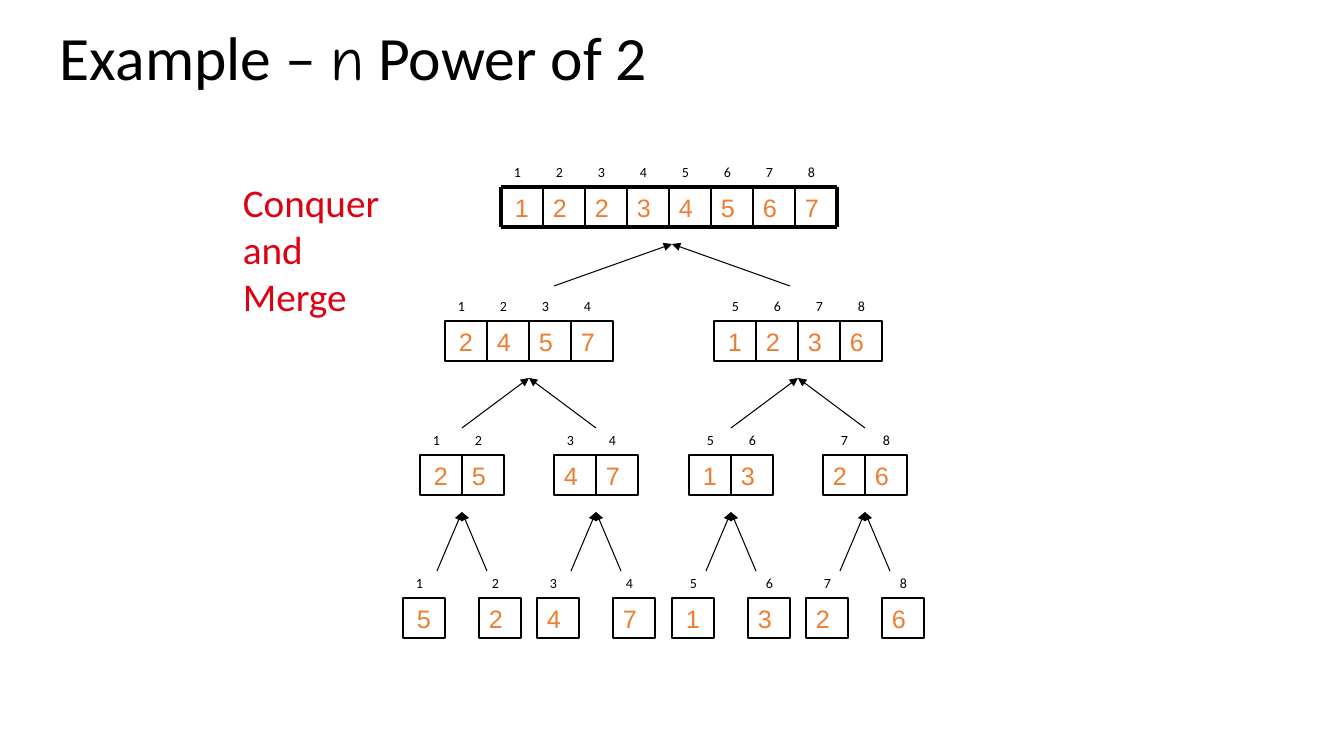
import pptx
import pptx.util
import pptx.dml.color
import pptx.enum.shapes
import pptx.enum.text
from lxml import etree

# Content
TITLE = [("Example – ", "Calibri"), ("n", "Comic Neue"), (" Power of 2", "Calibri")]
CAPTION = ["Conquer", "and", "Merge"]
PAIR_CENTRES = [462, 596, 731, 865]
LEAF_CENTRES = [centre + side * 38 for centre in PAIR_CENTRES for side in (-1, 1)]

# Sorted runs of each level, from the merged array down to the single items
LEVELS = [
    dict(top=187, centres=[669], runs=[[1, 2, 2, 3, 4, 5, 6, 7]]),
    dict(top=321, centres=[529, 798], runs=[[2, 4, 5, 7], [1, 2, 3, 6]]),
    dict(top=455, centres=PAIR_CENTRES, runs=[[2, 5], [4, 7], [1, 3], [2, 6]]),
    dict(top=598, centres=LEAF_CENTRES, runs=[[5], [2], [4], [7], [1], [3], [2], [6]]),
]
# Merge arrows: tip height, foot height, half the distance between the feet, tips
MERGES = [
    (244, 286, 118, [672]),
    (378, 428, 67, [529, 798]),
    (512, 571, 25, PAIR_CENTRES),
]

BLACK = pptx.dml.color.RGBColor(0x00, 0x00, 0x00)
ORANGE = pptx.dml.color.RGBColor(0xED, 0x7D, 0x31)
RED = pptx.dml.color.RGBColor(0xDD, 0x01, 0x11)
CELL_W, CELL_H = 42, 40
INDEX_W, INDEX_H, INDEX_RISE = 25, 27, 28

Pt = pptx.util.Pt
ALIGN = pptx.enum.text.PP_ALIGN
ANCHOR = pptx.enum.text.MSO_ANCHOR
DRAWING_NS = "{http://schemas.openxmlformats.org/drawingml/2006/main}"


def px(*lengths):
    return [round(length * 914400 / 100.8) for length in lengths]


def set_font(paragraph, size, name, colour):
    paragraph.font.size = Pt(size)
    paragraph.font.name = name
    paragraph.font.color.rgb = colour


def add_line(slide, start, end, width, arrow=False):
    line = slide.shapes.add_connector(
        pptx.enum.shapes.MSO_CONNECTOR.STRAIGHT, *px(*start, *end))
    line.line.color.rgb = BLACK
    line.line.width = Pt(width)
    if arrow:
        etree.SubElement(line.line._get_or_add_ln(), DRAWING_NS + "headEnd", type="triangle")
    etree.SubElement(line._element.spPr, DRAWING_NS + "effectLst")


def add_index(slide, left, top, index):
    label = slide.shapes.add_textbox(*px(left, top, INDEX_W, INDEX_H))
    label.text_frame.word_wrap = True
    label.text_frame.text = str(index)
    set_font(label.text_frame.paragraphs[0], 10, "Calibri", BLACK)


def add_value(slide, left, top, value, centred, boxed):
    box = px(left, top, CELL_W, CELL_H)
    if boxed:
        cell = slide.shapes.add_shape(pptx.enum.shapes.MSO_SHAPE.RECTANGLE, *box)
        cell.shadow.inherit = False
        cell.fill.background()
        cell.line.color.rgb = BLACK
        cell.line.width = Pt(1.5)
    else:
        cell = slide.shapes.add_textbox(*box)
    frame = cell.text_frame
    frame.word_wrap = True
    frame.vertical_anchor = ANCHOR.MIDDLE
    frame.text = str(value)
    frame.paragraphs[0].alignment = ALIGN.CENTER if centred else ALIGN.LEFT
    set_font(frame.paragraphs[0], 18, "Arial", ORANGE)


def add_array_grid(slide, left, top, count):
    right, bottom = left + count * CELL_W, top + CELL_H
    for y in (top, bottom):
        add_line(slide, (left, y), (right, y), 2.25)
    for column in range(count + 1):
        x = left + column * CELL_W
        add_line(slide, (x, top), (x, bottom), 2.25 if column in (0, count) else 1)


def add_level(slide, top, centres, runs):
    index = 0
    whole = len(runs) == 1
    for centre, run in zip(centres, runs):
        run_left = centre - len(run) * CELL_W // 2
        for column, value in enumerate(run):
            index += 1
            left = run_left + column * CELL_W
            index_shift = 3 if whole or index <= 4 else 8
            add_index(slide, left + index_shift, top - INDEX_RISE, index)
            # The first item of each half is centred in its cell
            add_value(slide, left, top, value, column == 0 and index in (1, 5), not whole)
        if whole:
            add_array_grid(slide, run_left, top, len(run))


def main():
    deck = pptx.Presentation()
    deck.slide_width, deck.slide_height = px(1344, 756)
    slide = deck.slides.add_slide(deck.slide_layouts[6])

    # Title
    title = slide.shapes.add_textbox(*px(50, 11, 1210, 100)).text_frame
    title.word_wrap = True
    title.vertical_anchor = ANCHOR.MIDDLE
    heading = title.paragraphs[0]
    heading.line_spacing = 0.9
    for words, face in TITLE:
        run = heading.add_run()
        run.text = words
        run.font.name = face
        run.font.size = Pt(44)
        run.font.color.rgb = BLACK

    # Merge tree
    for level in LEVELS:
        add_level(slide, **level)
    for tip_y, foot_y, spread, tips in MERGES:
        for tip_x in tips:
            for side in (-1, 1):
                add_line(slide, (tip_x, tip_y), (tip_x + side * spread, foot_y), 0.75, arrow=True)

    # Caption
    caption = slide.shapes.add_textbox(*px(233, 173, 158, 152)).text_frame
    caption.word_wrap = False
    caption.text = "\n".join(CAPTION)
    for paragraph in caption.paragraphs:
        set_font(paragraph, 28, "Calibri", RED)

    deck.save("out.pptx")


if __name__ == "__main__":
    main()
